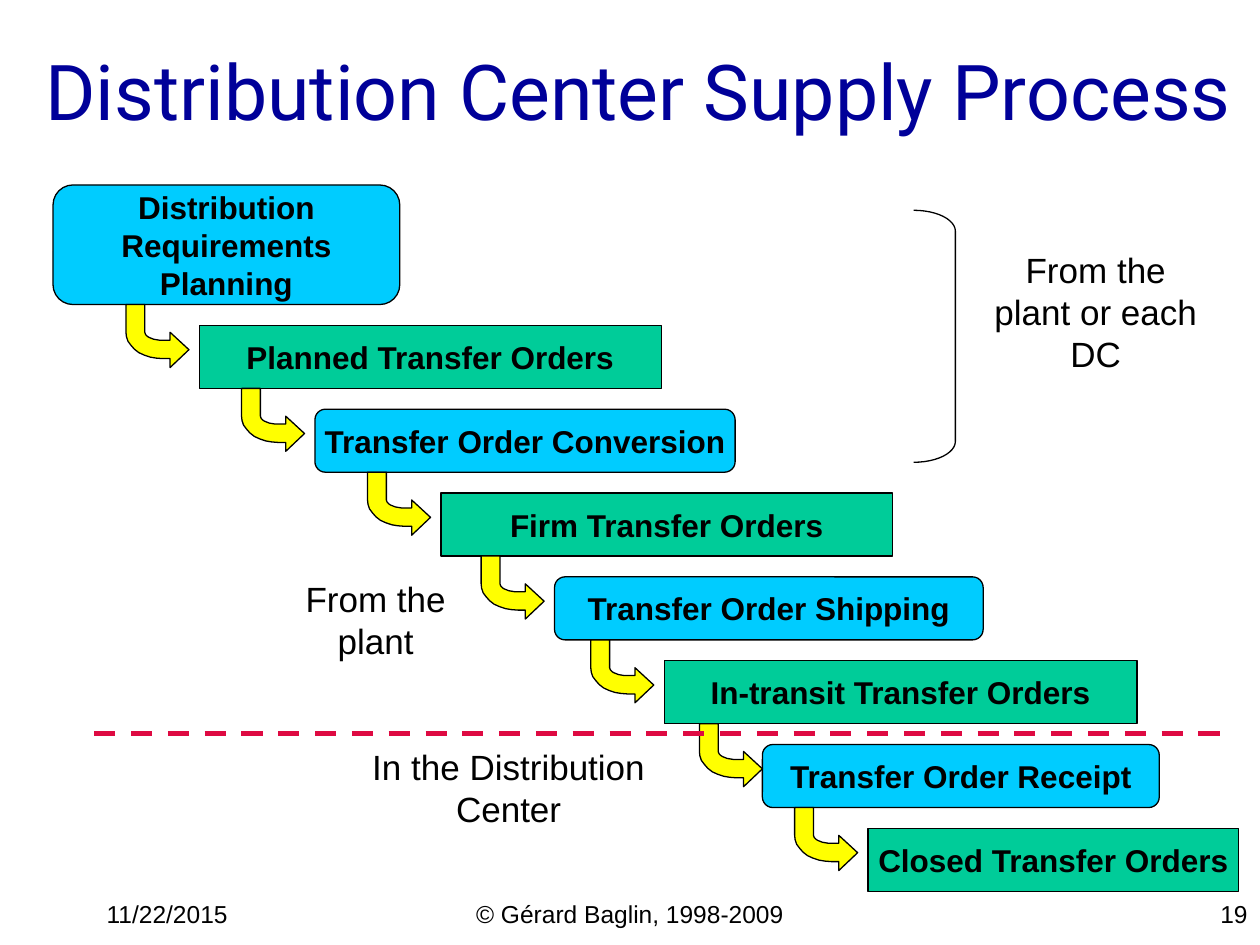
"""Build the distribution center supply process slide."""
from math import cos, radians, sin

from lxml import etree
from pptx import Presentation
from pptx.dml.color import RGBColor
from pptx.enum.dml import MSO_LINE
from pptx.enum.shapes import MSO_CONNECTOR, MSO_SHAPE
from pptx.enum.text import MSO_ANCHOR, PP_ALIGN
from pptx.oxml.ns import qn
from pptx.util import Cm, Pt

BLACK = RGBColor(0x00, 0x00, 0x00)
NAVY = RGBColor(0x00, 0x00, 0x99)
CYAN = RGBColor(0x00, 0xCC, 0xFF)
GREEN = RGBColor(0x00, 0xCC, 0x99)
YELLOW = RGBColor(0xFF, 0xFF, 0x00)
RED = RGBColor(0xDE, 0x0A, 0x42)
LEFT, CENTER, RIGHT = PP_ALIGN.LEFT, PP_ALIGN.CENTER, PP_ALIGN.RIGHT
TOP, MIDDLE = MSO_ANCHOR.TOP, MSO_ANCHOR.MIDDLE
RECT, ROUNDED = MSO_SHAPE.RECTANGLE, MSO_SHAPE.ROUNDED_RECTANGLE

TITLE = {"name": "Roboto", "size": Pt(44)}
STEP = {"name": "Arial", "size": Pt(18), "bold": True}
LABEL = {"name": "Arial", "size": Pt(20)}
FOOTER = {"name": "Arial", "size": Pt(14)}


def write(sp, text, fmt, align=CENTER, anchor=MIDDLE, color=BLACK, inset=0.25, wrap=True):
    frame = {"word_wrap": wrap, "vertical_anchor": anchor,
             "margin_left": Cm(inset), "margin_right": Cm(inset)}
    tf = sp.text_frame
    for key, value in frame.items():
        setattr(tf, key, value)
    p = tf.paragraphs[0]
    p.alignment = align
    r = p.add_run()
    r.text = text
    for key, value in fmt.items():
        setattr(r.font, key, value)
    r.font.color.rgb = color


def paint(sp, fill=None):
    sp.shadow.inherit = False
    if fill is None:
        sp.fill.background()
    else:
        sp.fill.solid()
        sp.fill.fore_color.rgb = fill
    sp.line.color.rgb = BLACK
    sp.line.width = Pt(0.75)


prs = Presentation()
prs.slide_width, prs.slide_height = Cm(25.4), Cm(19.05)
s = prs.slides.add_slide(prs.slide_layouts[6])

texts = [
    ("11/22/2015", (1.9, 17.99, 5.29, 0.64), FOOTER, LEFT, TOP, BLACK, 0.25),
    ("© Gérard Baglin, 1998-2009", (8.68, 17.99, 8.04, 0.64), FOOTER, CENTER, TOP, BLACK, 0.25),
    ("19", (20.11, 17.99, 5.29, 0.64), FOOTER, RIGHT, TOP, BLACK, 0.25),
    ("Distribution Center Supply Process", (0.21, 0.21, 24.89, 3.18),
     TITLE, RIGHT, MIDDLE, NAVY, 0.25),
    ("From the plant or each DC", (19.69, 4.88, 4.8, 2.79), LABEL, CENTER, MIDDLE, BLACK, 0.25),
    ("From the plant", (5.05, 11.94, 5.05, 1.09), LABEL, CENTER, MIDDLE, BLACK, 0.75),
    ("In the Distribution Center", (6.1, 15.34, 8.31, 1.09), LABEL, CENTER, MIDDLE, BLACK, 0.75),
]
for text, box, *style in texts:
    sp = s.shapes.add_textbox(*map(Cm, box))
    write(sp, text, *style)

sp = s.shapes.add_shape(ROUNDED, Cm(1.07), Cm(3.73), Cm(6.99), Cm(2.41))
paint(sp, CYAN)
write(sp, "Distribution Requirements Planning", STEP)

angles = [radians(a) for a in range(90, 181, 10)]
outer = [(74 + 74 * cos(a), 56 + 53 * sin(a)) for a in angles]
inner = [(74 + 36 * cos(a), 56 + 16 * sin(a)) for a in reversed(angles)]
outline = [(89, 127), (89, 109), *outer, (0, 0), (38, 0), *inner, (89, 72), (89, 56)]

steps = [
    ("Planned Transfer Orders", 4.02, 9.31, 1.48),
    ("Transfer Order Conversion", 6.35, 8.47, 1.48),
    ("Firm Transfer Orders", 8.89, 9.1, 1.48),
    ("Transfer Order Shipping", 11.18, 8.64, 1.48),
    ("In-transit Transfer Orders", 13.39, 9.53, 1.48),
    ("Transfer Order Receipt", 15.37, 8, 1.27),
    ("Closed Transfer Orders", 17.5, 7.47, 1.48),
]
for i, (text, left, width, lead) in enumerate(steps):
    top = 6.56 + 1.69 * i
    kind, fill = ((RECT, GREEN), (ROUNDED, CYAN))[i % 2]
    sp = s.shapes.add_shape(kind, Cm(left), Cm(top), Cm(width), Cm(1.27))
    paint(sp, fill)
    write(sp, text, STEP, wrap=False)
    arrow = s.shapes.build_freeform(127, 91, scale=Cm(0.01))
    arrow.add_line_segments(outline, close=True)
    paint(arrow.convert_to_shape(Cm(left - lead), Cm(top - 0.42)), YELLOW)

sp = s.shapes.add_shape(MSO_SHAPE.RIGHT_BRACKET, Cm(18.42), Cm(4.24), Cm(0.84), Cm(5.08))
sp.adjustments[0] = 0.5
paint(sp)

line = s.shapes.add_connector(MSO_CONNECTOR.STRAIGHT, Cm(1.9), Cm(14.78), Cm(24.89), Cm(14.78))
line.line.color.rgb = RED
line.line.width = Pt(3)
line.line.dash_style = MSO_LINE.DASH
etree.SubElement(line._element.spPr, qn("a:effectLst"))

prs.save("out.pptx")
